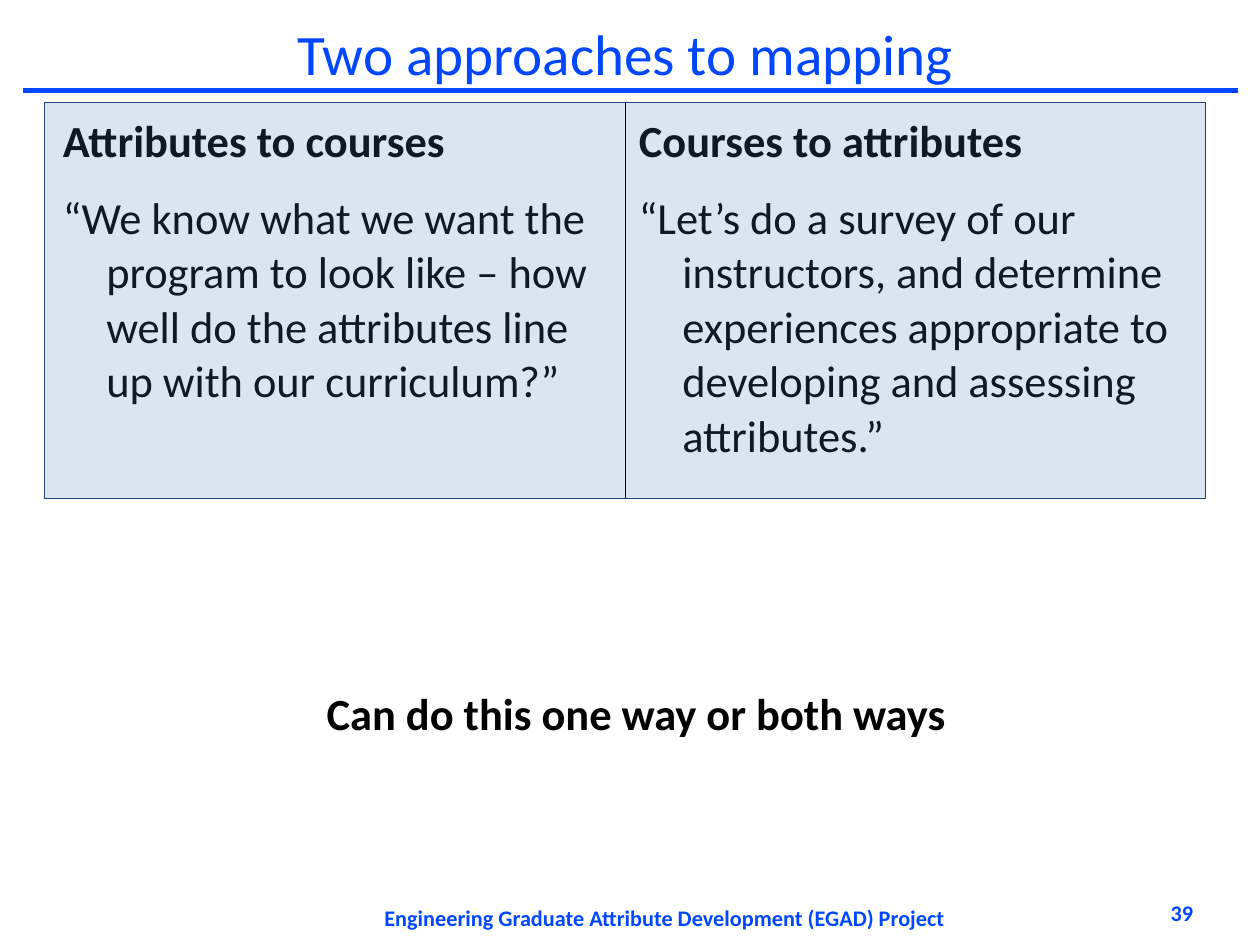
from lxml import etree
from pptx import Presentation
from pptx.dml.color import RGBColor
from pptx.enum.shapes import MSO_CONNECTOR, MSO_SHAPE
from pptx.enum.text import MSO_ANCHOR, MSO_AUTO_SIZE, PP_ALIGN
from pptx.oxml.ns import qn
from pptx.util import Cm, Inches, Pt

LEFT, CENTER, RIGHT = PP_ALIGN.LEFT, PP_ALIGN.CENTER, PP_ALIGN.RIGHT
TOP, MIDDLE = MSO_ANCHOR.TOP, MSO_ANCHOR.MIDDLE
NO_FIT = MSO_AUTO_SIZE.NONE
RECT, STRAIGHT = MSO_SHAPE.RECTANGLE, MSO_CONNECTOR.STRAIGHT

TITLE = "Two approaches to mapping"
COLUMNS = [
    ("Attributes to courses",
     "“We know what we want the program to look like – how well do the "
     "attributes line up with our curriculum?”"),
    ("Courses to attributes",
     "“Let’s do a survey of our instructors, and determine experiences "
     "appropriate to developing and assessing attributes.”"),
]
CLOSING = "Can do this one way or both ways"
FOOTER = "Engineering Graduate Attribute Development (EGAD) Project"
NUMBER = "39"

FONT = "Calibri"
COLORS = {"blue": "0047FF", "text": "000000", "panel": "4F81BD", "edge": "1F497D"}
SPACING = 1.02
COL_LEFT, COL_TOP, COL_WIDTH, COL_HEIGHT, COL_STEP = 0.55, 0.98, 4.88, 6.69, 5.04
PANEL = (0.39, 0.9, 10.16, 3.46)


def color(name):
    return RGBColor.from_string(COLORS[name])


def place(shape, box):
    shape.left, shape.top, shape.width, shape.height = map(Inches, box)


def frame(shape, anchor=TOP, inset=0):
    text = shape.text_frame
    text.auto_size = NO_FIT
    text.word_wrap = True
    text.vertical_anchor = anchor
    text.margin_left = text.margin_right = Inches(inset)
    text.margin_top = text.margin_bottom = Inches(inset / 2)
    return text


def style(para, size, tint, bold=False, align=LEFT, spacing=1):
    para.alignment = align
    para.line_spacing = spacing
    para.space_before = Pt(0)
    for run in para.runs:
        run.font.name = FONT
        run.font.size = Pt(size)
        run.font.bold = bold
        run.font.color.rgb = color(tint)


def hang(para):
    """Set a hanging indent without a bullet."""
    props = para._p.get_or_add_pPr()
    props.set("marL", str(Inches(0.38)))
    props.set("indent", str(-Inches(0.38)))
    etree.SubElement(props, qn("a:buNone"))


def add_line(slide, start, end, tint, width):
    line = slide.shapes.add_connector(STRAIGHT, *map(Inches, start + end))
    line.line.color.rgb = color(tint)
    line.line.width = Pt(width)
    etree.SubElement(line._element.spPr, qn("a:effectLst"))


def add_label(slide, words, box, size, tint, align=LEFT, inset=0, spacing=1):
    label = slide.shapes.add_textbox(*map(Inches, box))
    text = frame(label, inset=inset)
    text.text = words
    style(text.paragraphs[0], size, tint, True, align, spacing)
    return text


def add_column(holder, index, words):
    place(holder, (COL_LEFT + index * COL_STEP, COL_TOP, COL_WIDTH, COL_HEIGHT))
    text = frame(holder)
    text.text = "\n".join(words)
    for row, para in enumerate(text.paragraphs):
        style(para, 28, "text", bold=row == 0, spacing=SPACING)
        para.space_after = Pt(14.2)
        hang(para)


def add_panel(slide):
    panel = slide.shapes.add_shape(RECT, *map(Inches, PANEL))
    panel.shadow.inherit = False
    panel.fill.solid()
    panel.fill.fore_color.rgb = color("panel")
    tint = panel._element.spPr.find(qn("a:solidFill"))[0]
    etree.SubElement(tint, qn("a:alpha"), val="20000")
    panel.line.color.rgb = color("edge")
    panel.line.width = Pt(0.75)
    left, top, width, height = PANEL
    middle = left + width / 2
    add_line(slide, (middle, top), (middle, top + height), "text", 0.75)


def main():
    deck = Presentation()
    deck.slide_width, deck.slide_height = Cm(28), Cm(21)
    slide = deck.slides.add_slide(deck.slide_layouts[3])
    title, *bodies = slide.placeholders

    add_line(slide, (0.2, 0.79), (10.83, 0.79), "blue", 2.83)
    place(title, (0.51, 0.13, 9.92, 0.65))
    text = frame(title, MIDDLE)
    text.text = TITLE
    style(text.paragraphs[0], 36, "blue", align=CENTER, spacing=SPACING)

    for index, (holder, words) in enumerate(zip(bodies, COLUMNS)):
        add_column(holder, index, words)

    add_label(slide, FOOTER, (3.2, 7.91, 5.23, 0.3), 14, "blue", CENTER)
    add_label(slide, NUMBER, (7.87, 7.87, 2.57, 0.34), 14, "blue", RIGHT)
    add_panel(slide)
    closing = add_label(slide, CLOSING, (2.76, 5.94, 5.68, 0.57), 28, "text",
                        inset=0.1, spacing=SPACING)
    closing.word_wrap = False
    deck.save("out.pptx")


if __name__ == "__main__":
    main()
